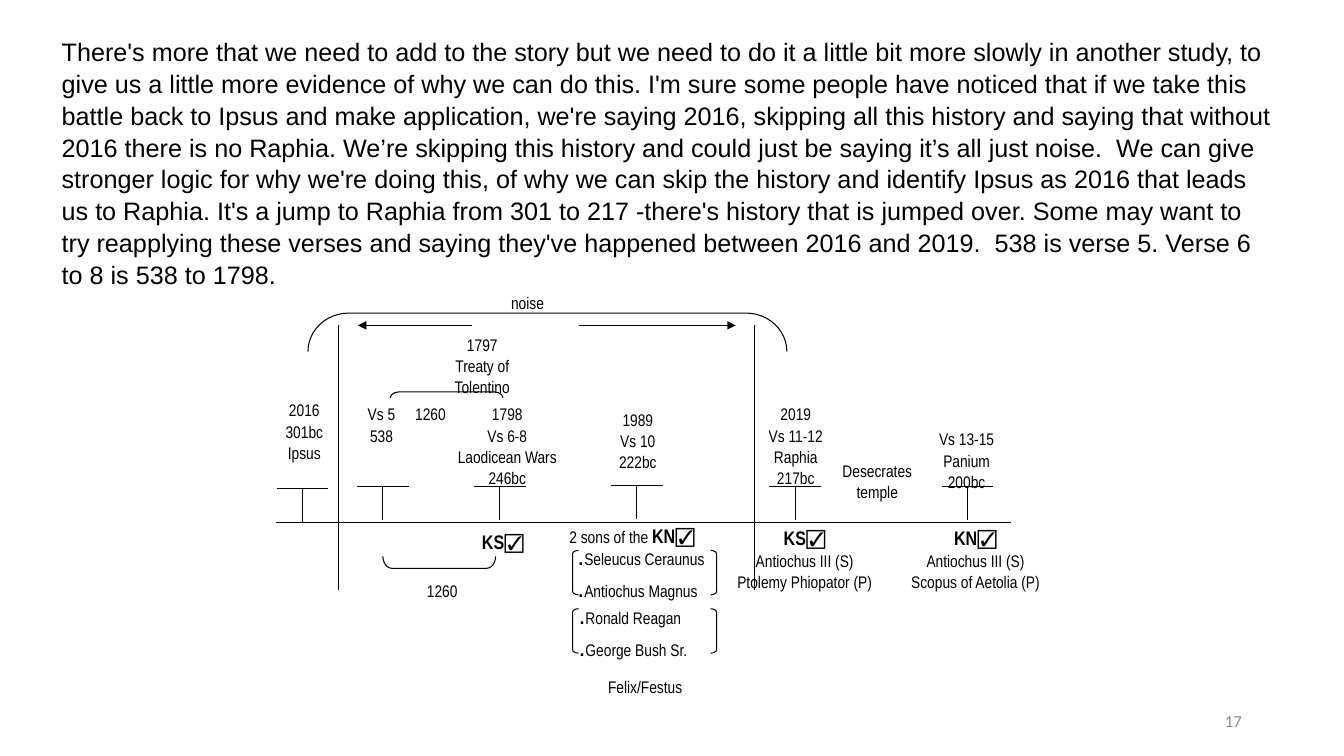
from lxml.etree import SubElement
from pptx import Presentation
from pptx.dml.color import RGBColor
from pptx.enum.dml import MSO_LINE
from pptx.enum.shapes import MSO_CONNECTOR, MSO_SHAPE
from pptx.enum.text import MSO_ANCHOR, MSO_AUTO_SIZE, PP_ALIGN
from pptx.oxml.ns import qn
from pptx.util import Cm, Pt

COLORS = {"ink": "000000", "number": "8C8C8C"}
STYLES = {
    "body": ("Arial", 18, False, "ink"),
    "label": ("Arial Narrow", 12, False, "ink"),
    "king": ("Arial Narrow", 14, True, "ink"),
    "check": ("Arial", 14, True, "ink"),
    "dot": ("Arial", 18, False, "ink"),
    "number": ("Calibri", 12, False, "number"),
}
LINE_SPACING = 1.05
INSET = 0.1

STORY = (
    "There's more that we need to add to the story but we need to do it a little bit more "
    "slowly in another study, to give us a little more evidence of why we can do this. "
    "I'm sure some people have noticed that if we take this battle back to Ipsus and make "
    "application, we're saying 2016, skipping all this history and saying that without 2016 "
    "there is no Raphia. We’re skipping this history and could just be saying it’s all just "
    "noise.  We can give stronger logic for why we're doing this, of why we can skip the "
    "history and identify Ipsus as 2016 that leads us to Raphia. It's a jump to Raphia from "
    "301 to 217 -there's history that is jumped over. Some may want to try reapplying these "
    "verses and saying they've happened between 2016 and 2019.  538 is verse 5. Verse 6 to 8 "
    "is 538 to 1798."
)
STORY_FRAME = (1.3, 0.76, 31.09, 7.19)
NUMBER_FRAME = (23.93, 17.65, 7.62, 1.02)

CHECK = ("☑", "check")
SOUTH = [("KS", "king"), CHECK]
NORTH = [("KN", "king"), CHECK]
DOT = (".", "dot")

CENTERED_NOTES = [
    ((12.52, 7.24, 1.55, 0.86), ["noise"]),
    ((10.77, 8.31, 2.77, 1.75), ["1797", "Treaty of", "Tolentino"]),
    ((6.96, 9.96, 1.42, 2.39), ["2016", "301bc", "Ipsus"]),
    ((9.02, 10.06, 1.19, 1.8), ["Vs 5", "538"]),
    ((10.29, 10.06, 1.12, 0.71), ["1260"]),
    ((11.4, 10.06, 2.77, 2.29), ["1798", "Vs 6-8", "Laodicean Wars", "246bc"]),
    ((14.88, 10.19, 2.39, 2.13), ["1989", "Vs 10", "222bc"]),
    ((19.18, 10.06, 1.75, 2.29), ["2019", "Vs 11-12", "Raphia", "217bc"]),
    ((21.08, 11.48, 2.06, 1.35), ["Desecrates", "temple"]),
    ((23.32, 10.69, 2.08, 1.7), ["Vs 13-15", "Panium", "200bc"]),
    ((11.89, 13.23, 1.57, 0.79), [SOUTH]),
    ((18.39, 13.13, 3.78, 2.06), [SOUTH, "Antiochus III (S)", "Ptolemy Phiopator (P)"]),
    ((22.83, 13.13, 3.51, 2.06), [NORTH, "Antiochus III (S)", "Scopus of Aetolia (P)"]),
    ((9.8, 14.5, 2.69, 0.71), ["1260"]),
    ((14.43, 16.92, 3.66, 0.71), ["Felix/Festus"]),
]
LEFT_NOTES = [
    ((14.25, 13.08, 3.84, 0.76), [[("2 sons of the ", "label"), *NORTH]]),
    ((14.45, 13.49, 3.66, 1.42),
     [[DOT, ("Seleucus Ceraunus", "label")], [DOT, ("Antiochus Magnus", "label")]]),
    ((14.48, 14.96, 3.66, 1.42),
     [[DOT, ("Ronald Reagan", "label")], [DOT, ("George Bush Sr.", "label")]]),
]

TIMELINE = (6.96, 13.16, 25.48, 13.16)
BOUNDARIES = [8.53, 19.02]
BOUNDARY_TOP, BOUNDARY_BOTTOM = 8.2, 14.86
NOISE_ARROWS = [(11.89, 8.2, 9.02, 8.2), (14.58, 8.2, 18.54, 8.2)]
MILESTONES = [(7.62, 12.32), (9.65, 12.27), (12.6, 12.27),
              (16.05, 12.24), (20.04, 12.27), (24.38, 12.27)]
STEM, BAR = 0.84, 1.3

SPANS = [
    ((13.31, 2.34, 0.97, 12.07), 90, 1.06),
    ((11.18, 8.53, 0.15, 2.84), 90, 1.5),
    ((10.92, 12.75, 0.3, 2.84), 270, 0.75),
]
PAIR_TOPS = [13.87, 15.34]
PAIR_SIDES = [(MSO_SHAPE.LEFT_BRACKET, 14.43), (MSO_SHAPE.RIGHT_BRACKET, 17.91)]


def color(name):
    return RGBColor.from_string(COLORS[name])


def cm(values):
    return [Cm(value) for value in values]


def fill_para(para, line, style, align):
    para.alignment = align
    para.line_spacing = LINE_SPACING
    para.space_before = para.space_after = Pt(0)
    for text, name in ([(line, style)] if isinstance(line, str) else line):
        span = para.add_run()
        span.text = text
        font, size, bold, ink = STYLES[name]
        span.font.name, span.font.size, span.font.bold = font, Pt(size), bold
        span.font.color.rgb = color(ink)


def add_note(page, frame, lines, align, style="label"):
    box = page.shapes.add_textbox(*cm(frame))
    text = box.text_frame
    text.word_wrap = True
    text.margin_left = text.margin_right = Cm(INSET)
    text.margin_top = text.margin_bottom = Cm(INSET)
    for index, line in enumerate(lines):
        para = text.add_paragraph() if index else text.paragraphs[0]
        fill_para(para, line, style, align)
    return box


def add_line(page, ends, arrow=False):
    line = page.shapes.add_connector(MSO_CONNECTOR.STRAIGHT, *cm(ends))
    line.line.color.rgb = color("ink")
    line.line.width = Pt(0.75)
    line.line.dash_style = MSO_LINE.SOLID
    if arrow:
        SubElement(line.line._get_or_add_ln(), qn("a:tailEnd"), type="triangle")
    SubElement(line._element.spPr, qn("a:effectLst"))


def add_bracket(page, kind, frame, turn, curve):
    bracket = page.shapes.add_shape(kind, *cm(frame))
    bracket.adjustments[0] = curve
    bracket.rotation = turn
    bracket.shadow.inherit = False
    bracket.fill.background()
    bracket.line.color.rgb = color("ink")
    bracket.line.width = Pt(0.75)


def add_story(page):
    title = page.shapes.title._element
    title.getparent().remove(title)
    body = page.placeholders[1]
    body.left, body.top, body.width, body.height = cm(STORY_FRAME)
    text = body.text_frame
    text.auto_size = MSO_AUTO_SIZE.NONE
    text.vertical_anchor = MSO_ANCHOR.TOP
    para = text.paragraphs[0]
    fill_para(para, STORY, "body", PP_ALIGN.LEFT)
    props = para._p.get_or_add_pPr()
    props.set("marL", "0")
    props.set("indent", "0")
    SubElement(props, qn("a:buNone"))


def main():
    deck = Presentation()
    deck.slide_width, deck.slide_height = Cm(33.87), Cm(19.05)
    page = deck.slides.add_slide(deck.slide_layouts[1])
    add_story(page)

    add_line(page, TIMELINE)
    for x in BOUNDARIES:
        add_line(page, (x, BOUNDARY_TOP, x, BOUNDARY_BOTTOM))
    for ends in NOISE_ARROWS:
        add_line(page, ends, arrow=True)
    for x, top in MILESTONES:
        add_line(page, (x, top, x, top + STEM))
        add_line(page, (x - BAR / 2, top, x + BAR / 2, top))

    for frame, turn, curve in SPANS:
        add_bracket(page, MSO_SHAPE.LEFT_BRACKET, frame, turn, curve)
    for top in PAIR_TOPS:
        for kind, left in PAIR_SIDES:
            add_bracket(page, kind, (left, top, 0.15, 1.12), 0, 0.58)

    for frame, lines in CENTERED_NOTES:
        add_note(page, frame, lines, PP_ALIGN.CENTER)
    for frame, lines in LEFT_NOTES:
        add_note(page, frame, lines, PP_ALIGN.LEFT)

    number = add_note(page, NUMBER_FRAME, ["17"], PP_ALIGN.RIGHT, "number")
    number.text_frame.margin_right = Cm(0.25)
    number.text_frame.vertical_anchor = MSO_ANCHOR.MIDDLE
    deck.save("out.pptx")


if __name__ == "__main__":
    main()
